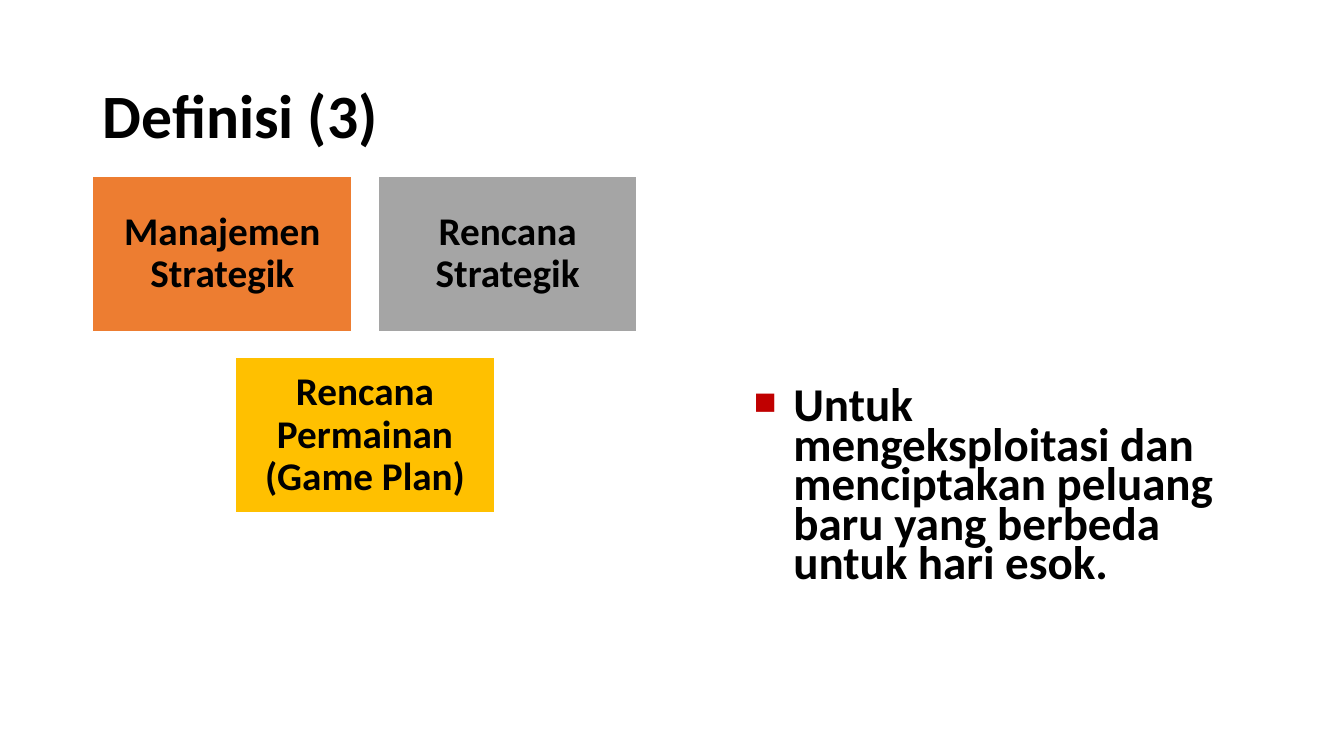
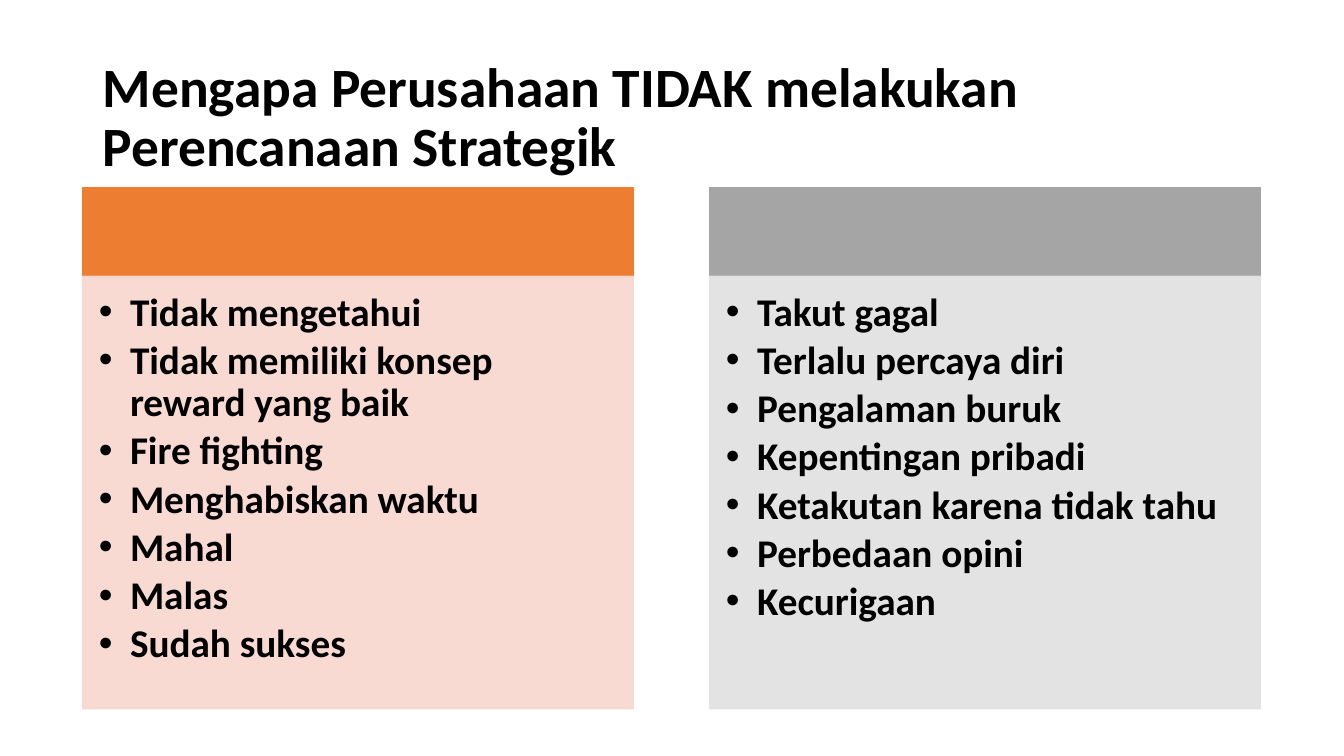
from lxml import etree
from pptx import Presentation
from pptx.dml.color import RGBColor
from pptx.enum.shapes import MSO_SHAPE
from pptx.enum.text import MSO_ANCHOR, PP_ALIGN
from pptx.oxml.ns import qn
from pptx.util import Inches, Pt

RECT = MSO_SHAPE.RECTANGLE
TOP, MID = MSO_ANCHOR.TOP, MSO_ANCHOR.MIDDLE
LEFT, CENTER = PP_ALIGN.LEFT, PP_ALIGN.CENTER
FONT = "Calibri"
BLACK, WHITE, RED = "000000", "FFFFFF", "C00000"
ORANGE, GRAY, GOLD = "ED7D31", "A5A5A5", "FFC000"
PINK, SILVER = "F8D7CE", "E1E1E1"
MARGIN = 0.92


def rgb(code):
    return RGBColor.from_string(code)


def add_text(slide, lines, at, size, fill=None, line=None, alpha=None,
             anchor=TOP, align=LEFT, inset=(0.1, 0.05, 0.1, 0.05),
             leading=0.9, after=0, bullet=None, indent=0, tint=BLACK, scale=100):
    """Add a filled rectangle, or a plain text box if no fill is given."""
    place = [Inches(v) for v in at]
    if fill:
        shape = slide.shapes.add_shape(RECT, *place)
        shape.shadow.inherit = False
        shape.fill.solid()
        shape.fill.fore_color.rgb = rgb(fill)
        shape.line.color.rgb = rgb(line or fill)
        shape.line.width = Pt(1)
        if alpha:
            for color in shape._element.spPr.iter(qn("a:srgbClr")):
                etree.SubElement(color, qn("a:alpha"), val=str(alpha * 1000))
    else:
        shape = slide.shapes.add_textbox(*place)
    frame = shape.text_frame
    frame.word_wrap = True
    frame.vertical_anchor = anchor
    (frame.margin_left, frame.margin_top,
     frame.margin_right, frame.margin_bottom) = [Inches(v) for v in inset]
    for i, words in enumerate(lines):
        para = frame.paragraphs[0] if i == 0 else frame.add_paragraph()
        para.text = words
        para.alignment = align
        para.line_spacing = leading
        para.space_after = Pt(after)
        if bullet:
            props = para._p.get_or_add_pPr()
            props.set("marL", str(Inches(indent)))
            props.set("indent", str(-Inches(indent)))
            color = etree.SubElement(props, qn("a:buClr"))
            etree.SubElement(color, qn("a:srgbClr"), val=tint)
            etree.SubElement(props, qn("a:buSzPct"), val=str(scale * 1000))
            etree.SubElement(props, qn("a:buFont"), typeface="Arial")
            etree.SubElement(props, qn("a:buChar"), char=bullet)
        font = para.font
        font.name, font.size, font.bold = FONT, Pt(size), True
        font.color.rgb = rgb(BLACK)


deck = Presentation()
deck.slide_width, deck.slide_height = Inches(13.33), Inches(7.5)
blank = deck.slide_layouts[6]

titles = [("Definisi (3)", 44),
          ("Mengapa Perusahaan TIDAK melakukan Perencanaan Strategik", 39.6)]
slides = []
for title, size in titles:
    slide = deck.slides.add_slide(blank)
    add_text(slide, [title], (MARGIN, 0.52, 11.5, 1.32), size, anchor=MID)
    slides.append(slide)
define, reasons = slides

# Two boxes on the first row, one centred below
box_w, box_h, gap = 2.57, 1.54, 0.26
boxes = [("Manajemen Strategik", ORANGE, 0, 0),
         ("Rencana Strategik", GRAY, 1, 0),
         ("Rencana Permainan (Game Plan)", GOLD, 0.5, 1)]
for words, fill, col, row in boxes:
    at = (MARGIN + col * (box_w + gap), 1.75 + row * (box_h + gap), box_w, box_h)
    add_text(define, [words], at, 28, fill=fill, line=WHITE, anchor=MID,
             align=CENTER, inset=[0.12] * 4)

goal = ("Untuk mengeksploitasi dan menciptakan peluang baru "
        "yang berbeda untuk hari esok.")
add_text(define, [goal], (7.38, 3.82, 4.84, 2.57), 33.6, leading=0.7,
         bullet="■", indent=0.39, tint=RED, scale=80)

# Two panels, each a header band over a list
panel_w, head_y, head_h, body_h = 5.46, 1.86, 0.88, 4.29
panels = [
    (ORANGE, PINK, ["Tidak mengetahui", "Tidak memiliki konsep reward yang baik",
                    "Fire fighting", "Menghabiskan waktu", "Mahal", "Malas",
                    "Sudah sukses"]),
    (GRAY, SILVER, ["Takut gagal", "Terlalu percaya diri", "Pengalaman buruk",
                    "Kepentingan pribadi", "Ketakutan karena tidak tahu",
                    "Perbedaan opini", "Kecurigaan"]),
]
for i, (dark, light, items) in enumerate(panels):
    x = 0.82 + i * (panel_w + 0.76)
    add_text(reasons, [], (x, head_y, panel_w, head_h), 28, fill=dark)
    add_text(reasons, items, (x, head_y + head_h, panel_w, body_h), 28,
             fill=light, alpha=90, inset=(0.16, 0.16, 0.22, 0.24),
             after=4.2, bullet="•", indent=0.31)

deck.save("out.pptx")
